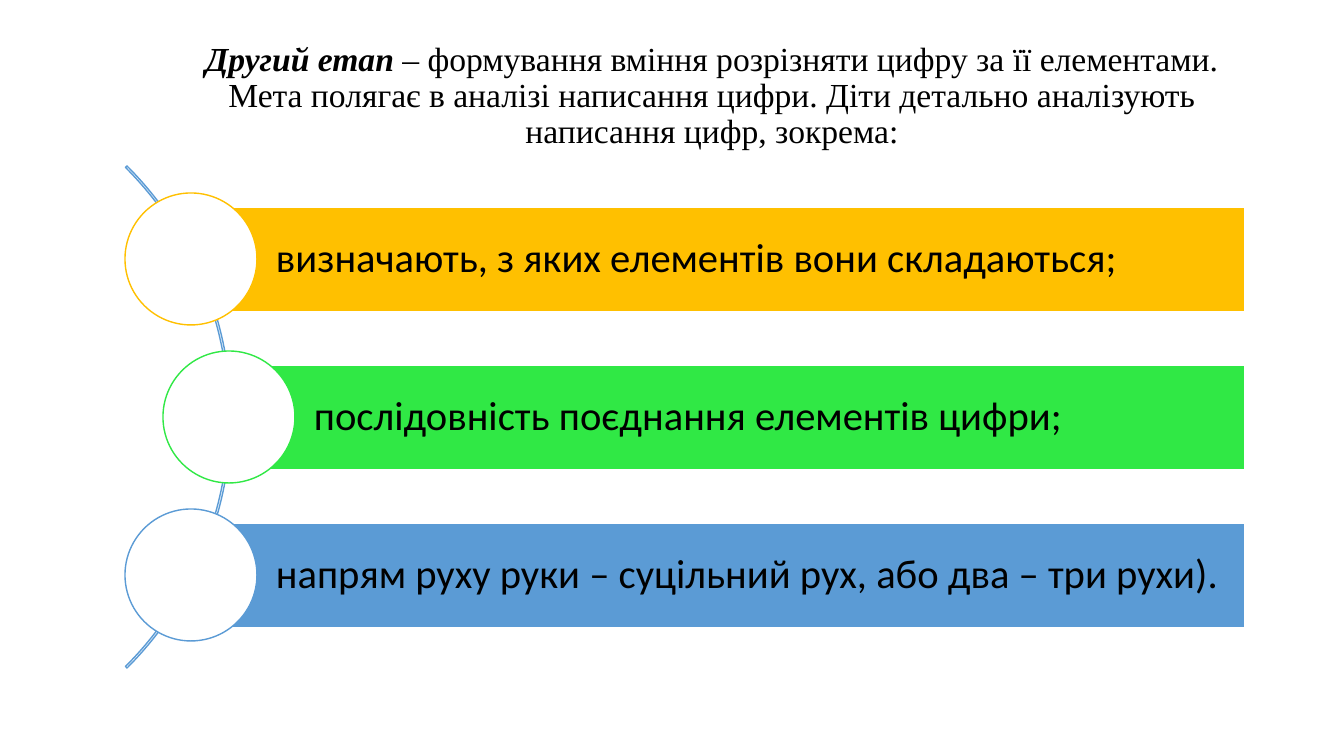
"""Build the slide on the second stage of learning to tell digits apart."""
from pptx import Presentation
from pptx.dml.color import RGBColor
from pptx.enum.shapes import MSO_SHAPE as Kind
from pptx.enum.text import MSO_ANCHOR as Anchor, PP_ALIGN as Align
from pptx.util import Pt

PX = 914400 / 100.8


def px(*nums):
    return [round(n * PX) for n in nums]


def draw(kind, box, fill, line):
    shape = deck.shapes.add_shape(kind, *px(*box))
    shape.shadow.inherit = False
    if fill:
        shape.fill.solid()
        shape.fill.fore_color.rgb = RGBColor.from_string(fill)
    else:
        shape.fill.background()
    shape.line.color.rgb = RGBColor.from_string(line)
    shape.line.width = Pt(1)
    return shape


show = Presentation()
show.slide_width, show.slide_height = px(1344, 756)
deck = show.slides.add_slide(show.slide_layouts[6])

title = deck.shapes.add_textbox(*px(172, 40, 1080, 113))
frame = title.text_frame
frame.word_wrap = True
frame.vertical_anchor = Anchor.MIDDLE
para = frame.paragraphs[0]
para.alignment = Align.CENTER
para.line_spacing = 0.9
parts = [
    ("Другий етап ", True),
    ("– формування вміння розрізняти цифру за її елементами. Мета полягає "
     "в аналізі написання цифри. Діти детально аналізують написання цифр, "
     "зокрема:", False),
]
for text, strong in parts:
    run = para.add_run()
    run.text = text
    look = {"name": "Times New Roman", "size": Pt(24), "bold": strong, "italic": strong}
    for key, value in look.items():
        setattr(run.font, key, value)
    run.font.color.rgb = RGBColor.from_string("000000")

arc = draw(Kind.BLOCK_ARC, (-479, 62, 710, 710), None, "5B9BD5")
for i, turn in enumerate((189, 27, 0.003)):
    arc.adjustments[i] = turn

steps = [
    ("визначають, з яких елементів вони складаються;", 192, "FFC000"),
    ("послідовність поєднання елементів цифри;", 230, "30E845"),
    ("напрям руху руки – суцільний рух, або два – три рухи).", 192, "5B9BD5"),
]
right = 1245
for i, (text, left, color) in enumerate(steps):
    top = 207 + 158 * i
    bar = draw(Kind.RECTANGLE, (left, top, right - left, 105), color, "FFFFFF")
    frame = bar.text_frame
    inset, pad = px(84, 8)
    form = {"word_wrap": True, "vertical_anchor": Anchor.MIDDLE, "margin_left": inset,
            "margin_right": pad, "margin_top": pad, "margin_bottom": pad}
    for key, value in form.items():
        setattr(frame, key, value)
    para = frame.paragraphs[0]
    para.alignment = Align.LEFT
    para.line_spacing = 0.9
    run = para.add_run()
    run.text = text
    run.font.name = "Calibri"
    run.font.size = Pt(29)
    run.font.color.rgb = RGBColor.from_string("000000")
    draw(Kind.OVAL, (left - 67, top - 14, 132, 132), "FFFFFF", color)

show.save("out.pptx")
